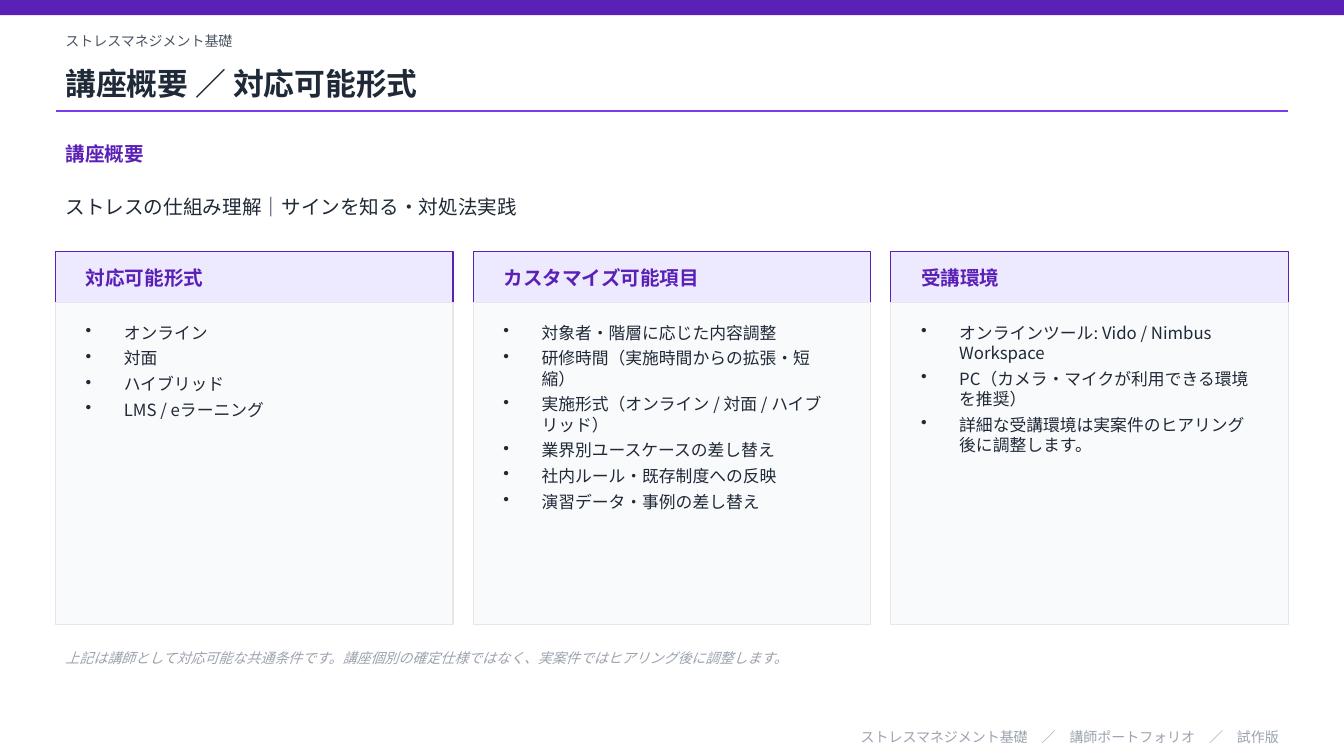
from pptx import Presentation
from pptx.dml.color import RGBColor
from pptx.enum.shapes import MSO_CONNECTOR, MSO_SHAPE
from pptx.enum.text import MSO_ANCHOR, PP_ALIGN
from pptx.oxml.ns import qn
from pptx.util import Cm, Pt
from lxml import etree

RECTANGLE = MSO_SHAPE.RECTANGLE
STRAIGHT = MSO_CONNECTOR.STRAIGHT
TOP, MIDDLE = MSO_ANCHOR.TOP, MSO_ANCHOR.MIDDLE
LEFT, RIGHT = PP_ALIGN.LEFT, PP_ALIGN.RIGHT

PURPLE = RGBColor(0x5B, 0x21, 0xB6)
VIOLET = RGBColor(0x7C, 0x3A, 0xED)
LAVENDER = RGBColor(0xED, 0xE9, 0xFE)
INK = RGBColor(0x1F, 0x29, 0x37)
SLATE = RGBColor(0x4B, 0x55, 0x63)
GRAY = RGBColor(0x9C, 0xA3, 0xAF)
BORDER = RGBColor(0xE5, 0xE7, 0xEB)
PANEL = RGBColor(0xF9, 0xFA, 0xFB)

FONT = "Noto Sans CJK JP"
KICKER = {"size": Pt(10), "color": SLATE}
TITLE = {"size": Pt(22), "bold": True, "color": INK}
HEADING = {"size": Pt(14), "bold": True, "color": PURPLE}
LEAD = {"size": Pt(14), "color": INK}
ITEM = {"size": Pt(12), "color": INK}
NOTE = {"size": Pt(10), "italic": True, "color": GRAY}
FOOTER = {"size": Pt(10), "color": GRAY}

# All boxes are (left, top, width, height) in centimetres.
SLIDE_WIDTH, SLIDE_HEIGHT = 33.87, 19.05
MARGIN = 1.4
CONTENT_WIDTH = SLIDE_WIDTH - 2 * MARGIN
CARD_GAP = 0.51
CARD_INSET = 0.51
CARD_HEADER_HEIGHT = 1.27
BULLET_INDENT = 0.96

COURSE = "ストレスマネジメント基礎"
CARDS = [
    ("対応可能形式", ["オンライン", "対面", "ハイブリッド", "LMS / eラーニング"]),
    ("カスタマイズ可能項目", [
        "対象者・階層に応じた内容調整",
        "研修時間（実施時間からの拡張・短縮）",
        "実施形式（オンライン / 対面 / ハイブリッド）",
        "業界別ユースケースの差し替え",
        "社内ルール・既存制度への反映",
        "演習データ・事例の差し替え",
    ]),
    ("受講環境", [
        "オンラインツール: Vido / Nimbus Workspace",
        "PC（カメラ・マイクが利用できる環境を推奨）",
        "詳細な受講環境は実案件のヒアリング後に調整します。",
    ]),
]


def to_lengths(box):
    return [Cm(value) for value in box]


def add_rectangle(slide, box, fill, line=None):
    shape = slide.shapes.add_shape(RECTANGLE, *to_lengths(box))
    shape.shadow.inherit = False
    shape.fill.solid()
    shape.fill.fore_color.rgb = fill
    if line is None:
        shape.line.fill.background()
    else:
        shape.line.color.rgb = line
        shape.line.width = Pt(0.75)


def format_run(run, style):
    for name, value in style.items():
        if name == "color":
            run.font.color.rgb = value
        else:
            setattr(run.font, name, value)
    run.font.name = FONT
    east_asian = etree.SubElement(run.font._element, qn("a:ea"))
    east_asian.set("typeface", FONT)


def add_bullet(paragraph):
    properties = paragraph._p.get_or_add_pPr()
    properties.set("marL", str(Cm(BULLET_INDENT)))
    properties.set("indent", str(-Cm(BULLET_INDENT)))
    etree.SubElement(properties, qn("a:buChar")).set("char", "•")
    paragraph.space_after = Pt(4)


def add_text(slide, box, lines, style, anchor=MIDDLE, alignment=LEFT, bulleted=False):
    frame = slide.shapes.add_textbox(*to_lengths(box)).text_frame
    frame.word_wrap = True
    frame.vertical_anchor = anchor
    for index, line in enumerate(lines):
        paragraph = frame.add_paragraph() if index else frame.paragraphs[0]
        if bulleted:
            add_bullet(paragraph)
        paragraph.alignment = alignment
        run = paragraph.add_run()
        run.text = line
        format_run(run, style)


def add_header(slide, box):
    left, top, width, height = box
    add_rectangle(slide, (0, 0, SLIDE_WIDTH, 0.38), PURPLE)
    add_text(slide, (left, top, width, 0.76), [COURSE], KICKER)
    add_text(slide, (left, top + 0.76, width, 1.4), ["講座概要 ／ 対応可能形式"], TITLE)
    bottom = top + height
    rule = slide.shapes.add_connector(
        STRAIGHT, *to_lengths((left, bottom, left + width, bottom)))
    rule.line.color.rgb = VIOLET
    rule.line.width = Pt(1)
    etree.SubElement(rule._element.spPr, qn("a:effectLst"))


def add_overview(slide, box):
    left, top, width, height = box
    add_text(slide, (left, top, width, 0.89), ["講座概要"], HEADING)
    add_text(slide, (left, top + 1.02, width, height - 1.02),
             ["ストレスの仕組み理解｜サインを知る・対処法実践"], LEAD)


def add_card(slide, box, heading, items):
    left, top, width, height = box
    body_top = top + CARD_HEADER_HEIGHT
    body_height = height - CARD_HEADER_HEIGHT
    text_left, text_width = left + CARD_INSET, width - 2 * CARD_INSET
    add_rectangle(slide, (left, top, width, CARD_HEADER_HEIGHT), LAVENDER, PURPLE)
    add_text(slide, (text_left, top, text_width, CARD_HEADER_HEIGHT), [heading], HEADING)
    add_rectangle(slide, (left, body_top, width, body_height), PANEL, BORDER)
    add_text(slide, (text_left, body_top + 0.38, text_width, body_height - 0.89),
             items, ITEM, anchor=TOP, bulleted=True)


def add_card_row(slide, box):
    left, top, width, height = box
    card_width = (width - CARD_GAP * (len(CARDS) - 1)) / len(CARDS)
    for index, (heading, items) in enumerate(CARDS):
        card_left = left + index * (card_width + CARD_GAP)
        add_card(slide, (card_left, top, card_width, height), heading, items)


def add_closing(slide, box):
    """Place the remark at the top of the box and the footer at its bottom."""
    left, top, width, height = box
    add_text(slide, (left, top, width, 0.89),
             ["上記は講師として対応可能な共通条件です。講座個別の確定仕様ではなく、"
              "実案件ではヒアリング後に調整します。"], NOTE)
    add_text(slide, (left, top + height - 0.56, width, 0.56),
             [COURSE + "　／　講師ポートフォリオ　／　試作版"], FOOTER, alignment=RIGHT)


def main():
    presentation = Presentation()
    presentation.slide_width = Cm(SLIDE_WIDTH)
    presentation.slide_height = Cm(SLIDE_HEIGHT)
    slide = presentation.slides.add_slide(presentation.slide_layouts[6])
    add_header(slide, (MARGIN, 0.64, CONTENT_WIDTH, 2.16))
    add_overview(slide, (MARGIN, 3.43, CONTENT_WIDTH, 2.54))
    add_card_row(slide, (MARGIN, 6.35, CONTENT_WIDTH, 9.4))
    add_closing(slide, (MARGIN, 16.13, CONTENT_WIDTH, 2.72))
    presentation.save("out.pptx")


if __name__ == "__main__":
    main()
